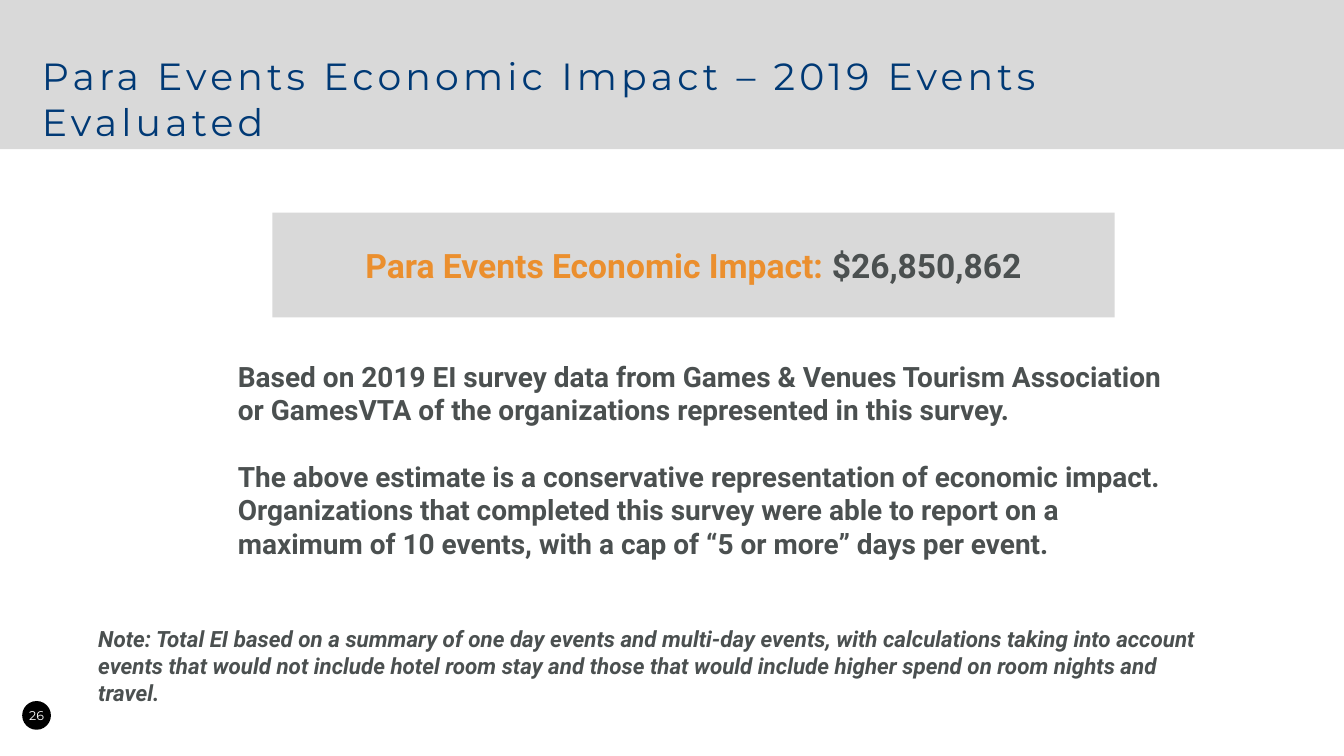
from collections import namedtuple

from pptx import Presentation
from pptx.dml.color import RGBColor
from pptx.enum.shapes import MSO_SHAPE as Shape
from pptx.enum.text import MSO_ANCHOR as Anchor, MSO_AUTO_SIZE as AutoSize, PP_ALIGN as Align
from pptx.util import Inches, Pt

SLIDE_WIDTH, SLIDE_HEIGHT = Inches(26.66), Inches(15)

BLACK = RGBColor(0x00, 0x00, 0x00)
WHITE = RGBColor(0xFF, 0xFF, 0xFF)
GREY = RGBColor(0xD9, 0xD9, 0xD9)
NAVY = RGBColor(0x00, 0x39, 0x75)
ORANGE = RGBColor(0xEB, 0x8F, 0x2E)
SLATE = RGBColor(0x4B, 0x50, 0x50)

HEADING_FONT, BODY_FONT = "Montserrat", "Roboto"

Box = namedtuple("Box", "left top width height")


def area(left, top, width, height):
    """Return a box given in percent of the slide's width and height."""
    return Box(int(SLIDE_WIDTH * left / 100), int(SLIDE_HEIGHT * top / 100),
               int(SLIDE_WIDTH * width / 100), int(SLIDE_HEIGHT * height / 100))


def add_span(para, text, font_name, size, color, bold=False, italic=False):
    span = para.add_run()
    span.text = text
    font = span.font
    font.name, font.size = font_name, Pt(size)
    font.bold, font.italic = bold, italic
    font.color.rgb = color
    return span


def add_filled(page, kind, box, color):
    shape = page.shapes.add_shape(kind, *box)
    shape.shadow.inherit = False
    shape.fill.solid()
    shape.fill.fore_color.rgb = color
    shape.line.fill.background()
    return shape


def centred_para(shape):
    """Return the first paragraph of a shape, centred both ways on one line."""
    frame = shape.text_frame
    frame.margin_left = frame.margin_right = frame.margin_top = frame.margin_bottom = 0
    frame.vertical_anchor = Anchor.MIDDLE
    frame.word_wrap = False
    para = frame.paragraphs[0]
    para.alignment = Align.CENTER
    return para


def add_header(page, band_box, title_box, text):
    band = add_filled(page, Shape.RECTANGLE, band_box, GREY)
    title = page.shapes.title
    title._element.addprevious(band._element)  # the band lies behind the title
    title.left, title.top, title.width, title.height = title_box
    frame = title.text_frame
    frame.auto_size = AutoSize.NONE
    frame.vertical_anchor = Anchor.TOP
    frame.word_wrap = True
    para = frame.paragraphs[0]
    para.alignment = Align.LEFT
    span = add_span(para, text, HEADING_FONT, 54, NAVY)
    span._r.get_or_add_rPr().set("spc", "600")


def add_total(page, box, label, amount):
    para = centred_para(add_filled(page, Shape.RECTANGLE, box, GREY))
    for text, color in ((label, ORANGE), (amount, SLATE)):
        add_span(para, text, BODY_FONT, 48, color, bold=True)


def add_prose(page, box, texts, size, gap=0, italic=False):
    frame = page.shapes.add_textbox(*box).text_frame
    frame.word_wrap = True
    for index, text in enumerate(texts):
        para = frame.add_paragraph() if index else frame.paragraphs[0]
        if index:
            para.space_before = Pt(gap)
        add_span(para, text, BODY_FONT, size, SLATE, bold=True, italic=italic)


def add_page_number(page, box, number):
    badge = add_filled(page, Shape.OVAL, box, BLACK)
    add_span(centred_para(badge), number, HEADING_FONT, 18, WHITE)


def main():
    deck = Presentation()
    deck.slide_width, deck.slide_height = SLIDE_WIDTH, SLIDE_HEIGHT
    page = deck.slides.add_slide(deck.slide_layouts.get_by_name("Title Only"))

    add_page_number(page, area(1.65, 92.73, 2.14, 3.8), "26")
    add_header(page, area(0, 0, 100, 19.73), area(2.74, 6.67, 92.39, 6.73),
               "Para Events Economic Impact – 2019 Events Evaluated")
    add_total(page, area(20.26, 28.13, 62.68, 13.87),
              "Para Events Economic Impact: ", "$26,850,862")
    add_prose(page, area(17.33, 47.2, 70.37, 27.6), (
        "Based on 2019 EI survey data from Games & Venues Tourism Association "
        "or GamesVTA of the organizations represented in this survey.",
        "The above estimate is a conservative representation of economic impact. "
        "Organizations that completed this survey were able to report on a maximum "
        "of 10 events, with a cap of “5 or more” days per event.",
    ), 40, gap=47)
    add_prose(page, area(6.94, 82.4, 83.98, 7.87), (
        "Note: Total EI based on a summary of one day events and multi-day events, "
        "with calculations taking into account events that would not include hotel "
        "room stay and those that would include higher spend on room nights and travel.",
    ), 32, italic=True)

    deck.save("out.pptx")


if __name__ == "__main__":
    main()
